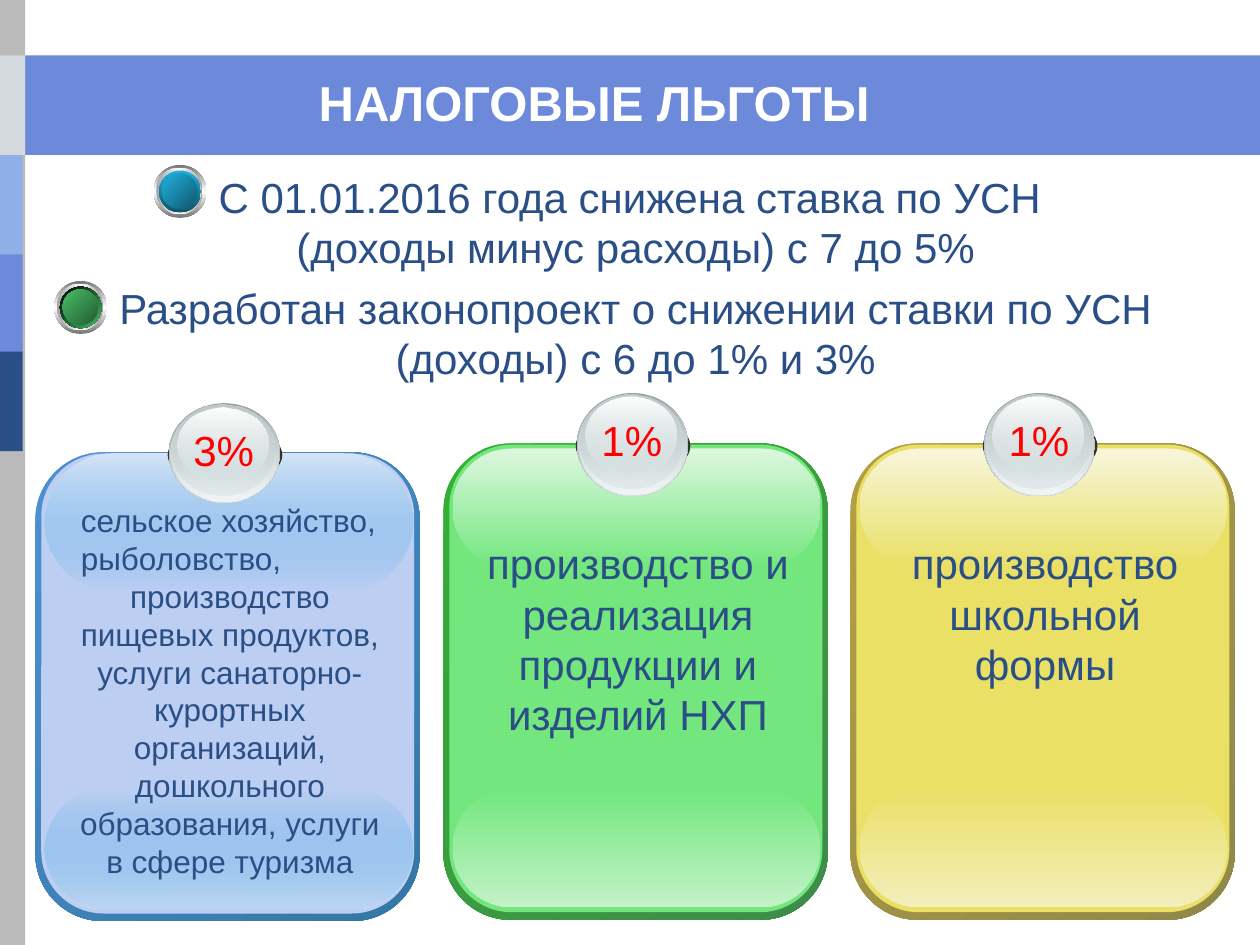
from pptx import Presentation
from pptx.dml.color import RGBColor
from pptx.enum.shapes import MSO_SHAPE as SHAPE
from pptx.enum.text import MSO_ANCHOR as ANCHOR, MSO_AUTO_SIZE as AUTO, PP_ALIGN as ALIGN
from pptx.oxml import parse_xml
from pptx.oxml.ns import nsdecls
from pptx.util import Pt

COLORS = {
    "band": "6C89DA", "strip": "BABABA", "mist": "D3D9DD", "sky": "8FAFE9",
    "navy": "2A4F86", "white": "FFFFFF", "red": "FF0000", "shade": "333333",
}
KNOB_LAYERS = [
    (0.7, 0, 63.4, 1, [(0, "99A1A2"), (100, "D6E1E2")]),
    (1.4, 0.2, 61.9, 0.98, [(0, "D6E1E2", 0), (100, "F2F5F5")]),
    (2.2, 0.7, 58.7, 0.915, [(0, "C1CBCC"), (100, "D6E1E2", 48)]),
    (5.6, 2.2, 51.8, 0.74, [(0, "FFFFFF"), (100, "D6E1E2", 38)]),
]
BEAD_LAYERS = [
    (0, 30.2, [(0, "767676"), (50, "FFFFFF"), (100, "767676")], 90),
    (1.5, 26.6, [(0, "A2A2A2"), (50, "FFFFFF"), (100, "A2A2A2")], 0),
    (3.2, 23.8, [(0, "FFFFFF"), (50, "57ABA3"), (100, "FFFFFF")], 45),
    (3.2, 23.8, "rim", 0),
    (4.8, 20.2, [(0, "43837D"), (50, "57ABA3"), (100, "43837D")], 315),
    (4.8, 20.2, "core", 45),
]
BEADS = [
    {"at": (87.8, 94.3), "rim": [(0, "21B3E1"), (100, "0F5368")], "rim_angle": 90,
     "core": [(0, "21B3E1"), (100, "10576D")]},
    {"at": (31, 160.6), "rim": [(0, "000000"), (100, "48BE67")], "rim_angle": 45,
     "core": [(0, "48BE67"), (100, "235C32")]},
]
CARDS = [
    {"box": (20.2, 258.5, 219.6, 267.8), "frame": ("4E91D4", "3477A4"), "body": "BCCFF2",
     "top": [(0, "D7E5F7"), (100, "3CA1E6", 0)], "bottom": [(0, "3CA1E6", 0), (100, "BDD6F3")],
     "shine": (0.7, 78.5), "knob": (-28.1, 56.9), "rate": "3%", "text_top": 24.5, "size": 18,
     "text": ["сельское хозяйство, рыболовство,",
              "производство пищевых продуктов, услуги\u00a0санаторно-курортных организаций, "
              "дошкольного образования, услуги в сфере туризма"]},
    {"box": (253.4, 253.4, 219.6, 272.2), "frame": ("34B034", "3F8B4A"), "body": "73E77E",
     "top": [(0, "DDF7DF"), (100, "73E77E")], "bottom": [(0, "73E77E"), (100, "C3F2C7")],
     "shine": (2.9, 67.7), "knob": (-28.8, 59), "rate": "1%", "text_top": 50.4, "size": 24,
     "text": ["производство и реализация продукции и изделий НХП"]},
    {"box": (486, 253.4, 219.6, 272.2), "frame": ("B59F43", "8F8849"), "body": "E9E065",
     "top": [(0, "F8F5DB"), (100, "E9E065")], "bottom": [(0, "E9E065"), (100, "F3EEBB")],
     "shine": (2.9, 67.7), "knob": (-28.8, 59), "rate": "1%", "text_top": 50.4, "size": 24,
     "text": ["производство школьной формы"]},
]


def apply_gradient(shape, stops, angle):
    """Fill a shape with (position, colour, optional opacity) stops."""
    marks = ""
    for position, color, *opacity in stops:
        alpha = f'<a:alpha val="{opacity[0] * 1000}"/>' if opacity else ""
        marks += f'<a:gs pos="{position * 1000}"><a:srgbClr val="{color}">{alpha}</a:srgbClr></a:gs>'
    gradient = parse_xml(
        f'<a:gradFill {nsdecls("a")} rotWithShape="1"><a:gsLst>{marks}</a:gsLst>'
        f'<a:lin ang="{angle * 60000}" scaled="0"/></a:gradFill>')
    shape.fill.background()
    properties = shape._element.spPr
    properties.replace(properties.find("{*}noFill"), gradient)


def add_block(shapes, kind, box, fill, angle=90, rounding=None):
    """Add a borderless shape filled with a colour or with gradient stops."""
    block = shapes.add_shape(kind, *map(Pt, box))
    block.shadow.inherit = False
    block.line.fill.background()
    if rounding is not None:
        block.adjustments[0] = rounding
    if isinstance(fill, str):
        block.fill.solid()
        block.fill.fore_color.rgb = RGBColor.from_string(fill)
    else:
        apply_gradient(block, fill, angle)


def style(paragraph, size, color, bold=False):
    """Centre a paragraph and set its font."""
    paragraph.alignment = ALIGN.CENTER
    font = paragraph.font
    font.name, font.size, font.bold = "Arial", Pt(size), bold
    font.color.rgb = RGBColor.from_string(color)


def add_text(shapes, box, lines, size, color, wrap=True):
    """Add a centred text box and return its paragraphs."""
    frame = shapes.add_textbox(*map(Pt, box)).text_frame
    frame.word_wrap = wrap
    frame.text = "\n".join(lines)
    for paragraph in frame.paragraphs:
        style(paragraph, size, color)
    return frame.paragraphs


def add_backdrop(shapes, width, height):
    """Draw the title band and the coloured side strip."""
    blocks = [
        ((0, 31.7, width, 56.9), "band"), ((-0.7, 0, 15.1, height), "strip"),
        ((0, 31.7, 14.4, 56.9), "mist"), ((-1.4, 88.6, 14.4, 56.9), "sky"),
        ((-1.4, 145.4, 14.4, 56.9), "band"), ((-1.4, 200.9, 14.4, 56.9), "navy"),
    ]
    for box, color in blocks:
        add_block(shapes, SHAPE.RECTANGLE, box, COLORS[color])


def place_title(slide, left, top, width, height):
    """Move the title onto its band and format it."""
    title = slide.shapes.title
    slide.shapes._spTree.append(title._element)
    title.left, title.top, title.width, title.height = map(Pt, (left, top, width, height))
    frame = title.text_frame
    frame.text = "НАЛОГОВЫЕ ЛЬГОТЫ"
    frame.auto_size, frame.vertical_anchor = AUTO.NONE, ANCHOR.MIDDLE
    style(frame.paragraphs[0], 28, COLORS["white"], True)


def add_statements(shapes, left, top, width, height):
    """Write the two statements about the tax rate."""
    lines = ["С 01.01.2016 года снижена ставка по УСН ", "(доходы минус расходы) с 7 до 5%",
             "Разработан законопроект о снижении ставки по УСН (доходы) с 6 до 1% и 3%"]
    paragraphs = add_text(shapes, (left, top, width, height), lines, 24, COLORS["navy"])
    paragraphs[1].space_after = Pt(6)


def add_bead(shapes, bead):
    """Draw one glossy bullet bead."""
    left, top = bead["at"]
    group = shapes.add_group_shape().shapes
    for inset, size, fill, angle in BEAD_LAYERS:
        if fill == "rim":
            angle = bead["rim_angle"]
        stops = bead[fill] if isinstance(fill, str) else fill
        add_block(group, SHAPE.OVAL, (left + inset, top + inset, size, size), stops, angle)


def add_knob(shapes, left, top, height, rate):
    """Draw the round knob that carries a tax rate."""
    group = shapes.add_group_shape().shapes
    add_block(group, SHAPE.OVAL, (left, top + 12.6, 65.5, height * 0.6), COLORS["shade"])
    for dx, dy, width, share, stops in KNOB_LAYERS:
        add_block(group, SHAPE.OVAL, (left + dx, top + dy, width, height * share), stops)
    add_text(group, (left + 7.2, top + 8.6, 49.7, 36), [rate], 24, COLORS["red"], wrap=False)


def add_card(shapes, card):
    """Draw one glossy card with its knob and text."""
    left, top, width, height = card["box"]
    shine_top, shine_height = card["shine"]
    shine_left, shine_width = left + 5.2, 210.2
    group = shapes.add_group_shape().shapes
    parts = [
        (card["box"], list(zip((0, 100), card["frame"])), 45, 0.175),
        ((left + 3.4, top + 0.7, 213.1, height - 5), card["body"], 0, 0.167),
        ((shine_left, top + height - 74.9, shine_width, 67.7), card["bottom"], 90, 0.5),
        ((shine_left, top + shine_top, shine_width, shine_height), card["top"], 90, 0.5),
    ]
    for box, fill, angle, rounding in parts:
        add_block(group, SHAPE.ROUNDED_RECTANGLE, box, fill, angle, rounding)
    knob_top, knob_height = card["knob"]
    add_knob(shapes, left + 75.6, top + knob_top, knob_height, card["rate"])
    text_box = (left + (width - 196.6) / 2 + 1.4, top + card["text_top"], 196.6, height - 80)
    paragraphs = add_text(shapes, text_box, card["text"], card["size"], COLORS["navy"])
    if len(paragraphs) > 1:
        paragraphs[0].alignment = ALIGN.LEFT
        paragraphs[0]._p.get_or_add_pPr().set("marL", str(Pt(6)))


def main():
    """Build and save the slide."""
    deck = Presentation()
    deck.slide_width, deck.slide_height = Pt(720), Pt(540)
    slide = deck.slides.add_slide(deck.slide_layouts[5])
    add_backdrop(slide.shapes, 720, 540)
    place_title(slide, 24.5, 36, 630, 44.6)
    add_statements(slide.shapes, 14.4, 94.3, 697.7, 129.6)
    for card in CARDS:
        add_card(slide.shapes, card)
    for bead in BEADS:
        add_bead(slide.shapes, bead)
    deck.save("out.pptx")


if __name__ == "__main__":
    main()
